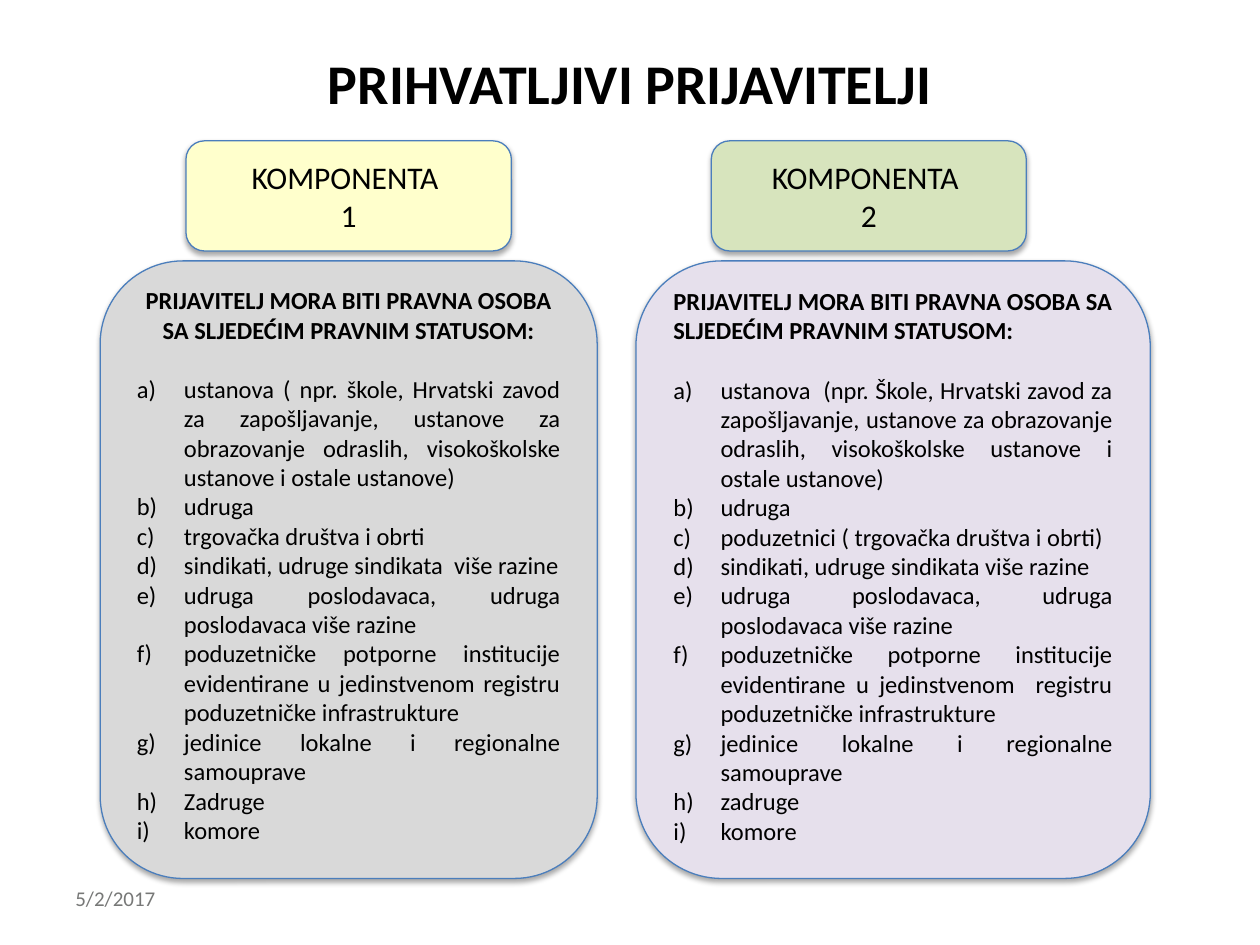
from dataclasses import dataclass

from lxml import etree
from pptx import Presentation
from pptx import util as u
from pptx.dml.color import RGBColor
from pptx.enum import shapes, text
from pptx.oxml.ns import qn

Cm, Pt = u.Cm, u.Pt
Al, Anc = text.PP_ALIGN, text.MSO_ANCHOR


@dataclass(frozen=True)
class Theme:
    font: str = "Calibri"
    ink: str = "000000"
    muted: str = "777877"
    edge: str = "4B7EBC"
    yellow: str = "FFFFCC"
    green: str = "D7E4BD"
    grey: str = "D9D9D9"
    lilac: str = "E6E0EC"
    title: int = 32
    head: int = 18
    body: int = 14
    date: int = 12


T = Theme()


@dataclass(frozen=True)
class Box:
    x: float
    y: float
    w: float
    h: float

    def place(self) -> tuple:
        return Cm(self.x), Cm(self.y), Cm(self.w), Cm(self.h)


@dataclass(frozen=True)
class Part:
    num: str
    head: Box
    tint: str
    body: Box
    fill: str
    align: Al
    items: tuple


LEAD = "PRIJAVITELJ MORA BITI PRAVNA OSOBA SA SLJEDEĆIM PRAVNIM STATUSOM:"
REST = "zapošljavanje, ustanove za obrazovanje odraslih, visokoškolske ustanove i ostale ustanove)"
UNION = "udruga poslodavaca, udruga poslodavaca više razine"
LOCAL = "jedinice lokalne i regionalne samouprave"

PARTS = (
    Part("1", Box(3.75, 2.84, 6.56, 2.22), T.yellow,
         Box(2.02, 5.26, 10.02, 12.45), T.grey, Al.CENTER, (
             "ustanova ( npr. škole, Hrvatski zavod za " + REST,
             "udruga",
             "trgovačka društva i obrti",
             "sindikati, udruge sindikata  više razine",
             UNION,
             "poduzetničke potporne institucije evidentirane u jedinstvenom registru"
             " poduzetničke infrastrukture",
             LOCAL, "Zadruge", "komore")),
    Part("2", Box(14.34, 2.84, 6.35, 2.22), T.green,
         Box(12.82, 5.26, 10.37, 12.45), T.lilac, Al.JUSTIFY, (
             "ustanova  (npr. Škole, Hrvatski zavod za " + REST,
             "udruga",
             "poduzetnici ( trgovačka društva i obrti)",
             "sindikati, udruge sindikata više razine",
             UNION,
             "poduzetničke potporne institucije evidentirane u jedinstvenom  registru"
             " poduzetničke infrastrukture",
             LOCAL, "zadruge", "komore")),
)


def write(frame, words: str, *, size: int, color: str = T.ink, bold: bool = False,
          align: Al = Al.LEFT, after: float = 0, listed: bool = False) -> None:
    """Fill the first paragraph while it is empty, else add another."""
    para = frame.paragraphs[-1]
    if para.runs:
        para = frame.add_paragraph()
    para.alignment = align
    if after:
        para.space_after = Pt(after)
    if listed:
        props = para._p.get_or_add_pPr()
        props.set("marL", str(Cm(0.95)))
        props.set("indent", str(-Cm(0.95)))
        etree.SubElement(props, qn("a:buAutoNum"), type="alphaLcParenR")
    run = para.add_run()
    run.text = words
    font = run.font
    font.name, font.size, font.bold = T.font, Pt(size), bold
    font.color.rgb = RGBColor.from_string(color)


def shade(shape) -> None:
    """Soft shadow falling straight down."""
    shape.shadow.inherit = False
    fx = shape._element.spPr.find(qn("a:effectLst"))
    drop = etree.SubElement(fx, qn("a:outerShdw"), blurRad=str(Pt(3.1)),
                            dist=str(Pt(1.8)), dir="5400000", rotWithShape="0")
    tone = etree.SubElement(drop, qn("a:srgbClr"), val=T.ink)
    etree.SubElement(tone, qn("a:alpha"), val="35000")


def panel(slide, box: Box, fill: str, anchor: Anc):
    shape = slide.shapes.add_shape(shapes.MSO_SHAPE.ROUNDED_RECTANGLE, *box.place())
    shape.fill.solid()
    shape.fill.fore_color.rgb = RGBColor.from_string(fill)
    shape.line.color.rgb = RGBColor.from_string(T.edge)
    shape.line.width = Pt(0.75)
    shade(shape)
    frame = shape.text_frame
    frame.word_wrap = True
    frame.vertical_anchor = anchor
    frame.margin_top = frame.margin_bottom = 0
    return frame


def draw(slide, part: Part) -> None:
    # Component label
    frame = panel(slide, part.head, part.tint, Anc.MIDDLE)
    for words in ("KOMPONENTA ", part.num):
        write(frame, words, size=T.head, align=Al.CENTER)
    # Lettered list of applicants
    frame = panel(slide, part.body, part.fill, Anc.TOP)
    write(frame, LEAD, size=T.body, bold=True, align=part.align, after=17)
    for item in part.items:
        write(frame, item, size=T.body, align=Al.JUSTIFY, listed=True)


def main() -> None:
    deck = Presentation()
    deck.slide_width, deck.slide_height = Cm(25.4), Cm(19.05)
    slide = deck.slides.add_slide(deck.slide_layouts[5])

    # Title
    title = slide.shapes.title
    title.left, title.top, title.width, title.height = Box(1.27, 0.76, 22.86, 1.8).place()
    frame = title.text_frame
    frame.auto_size = text.MSO_AUTO_SIZE.NONE
    frame.vertical_anchor = Anc.MIDDLE
    write(frame, "PRIHVATLJIVI PRIJAVITELJI", size=T.title, bold=True, align=Al.CENTER)

    # Date
    date = slide.shapes.add_textbox(*Box(1.27, 17.73, 5.92, 1.02).place())
    date.text_frame.word_wrap = True
    write(date.text_frame, "5/2/2017", size=T.date, color=T.muted)

    # Both components
    for part in PARTS:
        draw(slide, part)

    deck.save("out.pptx")


if __name__ == "__main__":
    main()
